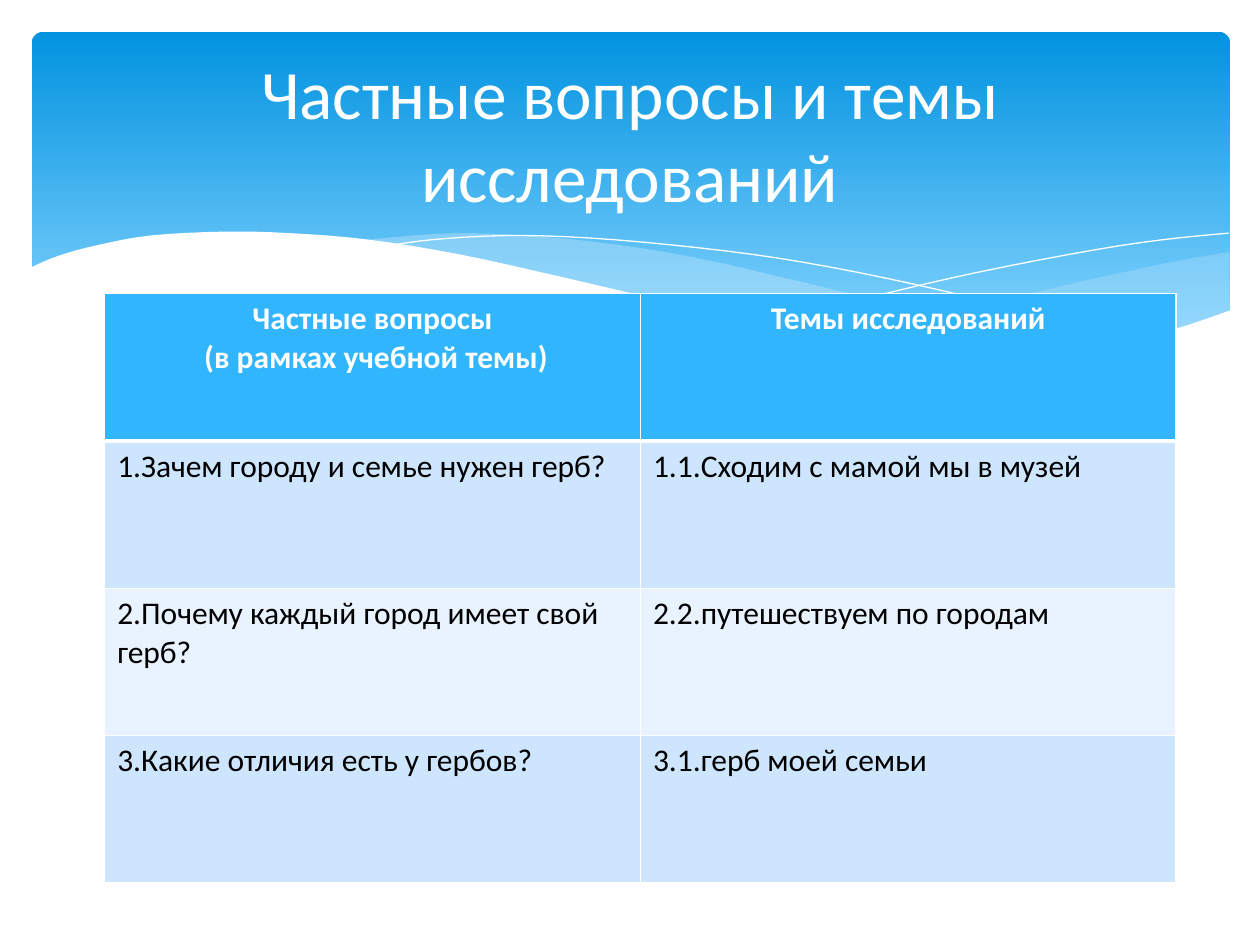
import pptx
import pptx.dml.color
import pptx.enum.shapes
import pptx.enum.text
import pptx.oxml
import pptx.oxml.ns
import pptx.util
from pptx.util import Cm, Pt

FONT = "Calibri"
WHITE = "FFFFFF"

# Edges of the waves, in cm from the top left corner of the header
RIGHT_WAVE = [
    [(24.15, 4.44), (23.11, 4.62), (21.23, 5.02), (19.15, 5.51), (17.29, 5.89), (16.15, 6.09)],
    [(16.15, 6.09), (17.27, 6.24), (18.59, 6.37), (19.76, 6.42), (21.05, 6.37), (22.14, 6.22),
     (23.11, 6.01), (24.15, 5.63)],
]
MIDDLE_WAVE = [
    [(22.04, 6.29), (19.86, 5.96), (17.29, 5.46), (15.34, 5), (13.46, 4.57), (11.78, 4.29),
     (10.03, 4.11), (8.53, 4.06), (7.31, 4.14), (6.62, 4.21)],
    [(6.62, 4.21), (8.55, 4.52), (10.76, 5), (12.82, 5.46), (15.06, 5.91), (17.01, 6.22),
     (18.69, 6.4), (20.14, 6.42), (21.13, 6.4), (22.04, 6.29)],
]
FALLING_LINE = [
    [(7.21, 4.31), (8.1, 4.19), (9.55, 4.11), (11.27, 4.16), (13.48, 4.36), (15.51, 4.64),
     (17.83, 5.1), (20.47, 5.74), (22.4, 6.27)],
]
RISING_LINE = [
    [(14.93, 5.89), (17.01, 5.33), (19.07, 4.85), (21.36, 4.41), (22.83, 4.19), (24.13, 4.06)],
]
WHITE_WAVE = [
    [(24.18, 5.61), (22.98, 6.01), (21.59, 6.29), (19.91, 6.4), (17.8, 6.27), (15.26, 5.91),
     (12.8, 5.43), (10.71, 4.95), (8.63, 4.49), (6.78, 4.19), (5.2, 4.06), (3.86, 4.03),
     (2.38, 4.11), (1.29, 4.31), (0.53, 4.52), (-0.06, 4.77)],
    [(-0.06, 7.72), (24.18, 7.72)],
]

ROWS = [
    ("Частные вопросы\n (в рамках учебной темы)", "Темы исследований"),
    ("1.Зачем городу и семье нужен герб?", "1.1.Сходим с мамой мы в музей"),
    ("2.Почему каждый город имеет свой герб?", "2.2.путешествуем по городам"),
    ("3.Какие отличия есть у гербов?", "3.1.герб моей семьи"),
]


def rgb(color):
    return pptx.dml.color.RGBColor.from_string(color)


def smooth(points, steps=4):
    """Return a Catmull-Rom curve through the points as a list of points."""
    padded = [points[0], *points, points[-1]]
    curve = [points[0]]
    for a, b, c, d in zip(padded, padded[1:], padded[2:], padded[3:]):
        for i in range(1, steps + 1):
            t = i / steps
            curve.append(tuple(
                (2 * q + (r - p) * t + (2 * p - 5 * q + 4 * r - s) * t ** 2
                 + (3 * q - p - 3 * r + s) * t ** 3) / 2
                for p, q, r, s in zip(a, b, c, d)))
    return curve


def add_wave(slide, left, top, edges, fill=None, alpha=100):
    """Draw a filled wave, or a white hairline if no fill is given."""
    points = [(left + Cm(x), top + Cm(y)) for edge in edges for x, y in smooth(edge)]
    builder = slide.shapes.build_freeform(*points[0])
    builder.add_line_segments(points[1:], close=fill is not None)
    sp = builder.convert_to_shape()
    sp.shadow.inherit = False
    if fill is None:
        sp.fill.background()
        sp.line.color.rgb = rgb(WHITE)
        sp.line.width = 0
        return
    sp.fill.solid()
    sp.fill.fore_color.rgb = rgb(fill)
    sp.line.fill.background()
    if alpha < 100:
        color = sp.fill._xPr.find(".//" + pptx.oxml.ns.qn("a:srgbClr"))
        color.append(pptx.oxml.parse_xml(
            f'<a:alpha {pptx.oxml.ns.nsdecls("a")} val="{alpha * 1000}"/>'))


def add_header(slide, left, top, width, height):
    sp = slide.shapes.add_shape(
        pptx.enum.shapes.MSO_SHAPE.ROUNDED_RECTANGLE, left, top, width, height)
    sp.adjustments[0] = 0.034
    sp.shadow.inherit = False
    sp.line.fill.background()
    sp.fill.gradient()
    sp.fill.gradient_angle = 270
    for stop, (position, color) in zip(sp.fill.gradient_stops, [(0, "0293E0"), (0.9, "83D3FE")]):
        stop.position = position
        stop.color.rgb = rgb(color)

    add_wave(slide, left, top, RIGHT_WAVE, "C6E7FC", 29)
    add_wave(slide, left, top, MIDDLE_WAVE, "C6E7FC", 40)
    add_wave(slide, left, top, FALLING_LINE)
    add_wave(slide, left, top, RISING_LINE)
    add_wave(slide, left, top, WHITE_WAVE, WHITE)


def format_text(tf, size, color, bold=False, centered=False):
    for p in tf.paragraphs:
        if centered:
            p.alignment = pptx.enum.text.PP_ALIGN.CENTER
        for r in p.runs:
            r.font.name = FONT
            r.font.size = Pt(size)
            r.font.bold = bold
            r.font.color.rgb = rgb(color)


def add_title(slide, left, top, width, height):
    tf = slide.shapes.add_textbox(left, top, width, height).text_frame
    tf.word_wrap = True
    tf.vertical_anchor = pptx.enum.text.MSO_ANCHOR.MIDDLE
    tf.text = "Частные вопросы и темы исследований"
    format_text(tf, 39.6, WHITE, centered=True)


def set_borders(cell, top, bottom):
    """Give the cell white borders; top and bottom are widths in points."""
    tc_pr = cell._tc.get_or_add_tcPr()
    for i, (side, width) in enumerate([("L", 1), ("R", 1), ("T", top), ("B", bottom)]):
        tc_pr.insert(i, pptx.oxml.parse_xml(
            f'<a:ln{side} {pptx.oxml.ns.nsdecls("a")} w="{Pt(width)}">'
            f'<a:solidFill><a:srgbClr val="{WHITE}"/></a:solidFill></a:ln{side}>'))


def add_questions_table(slide, left, top, width, height):
    table = slide.shapes.add_table(len(ROWS), len(ROWS[0]), left, top, width, height).table
    for i, texts in enumerate(ROWS):
        header = i == 0
        fill = "31B6FD" if header else ("E8F3FF", "CEE5FE")[i % 2]
        for j, text in enumerate(texts):
            cell = table.cell(i, j)
            cell.fill.solid()
            cell.fill.fore_color.rgb = rgb(fill)
            set_borders(cell, top=3 if i == 1 else 1, bottom=3 if header else 1)
            cell.text_frame.text = text
            format_text(cell.text_frame, 18, WHITE if header else "000000", header, header)


def main():
    prs = pptx.Presentation()
    prs.slide_width, prs.slide_height = Cm(25.4), Cm(19.05)
    slide = prs.slides.add_slide(prs.slide_layouts[6])
    add_header(slide, Cm(0.64), Cm(0.64), Cm(24.16), Cm(6.86))
    add_questions_table(slide, Cm(2.11), Cm(5.92), Cm(21.6), Cm(11.88))
    add_title(slide, Cm(1.27), Cm(0.94), Cm(22.86), Cm(3.48))
    prs.save("out.pptx")


if __name__ == "__main__":
    main()
